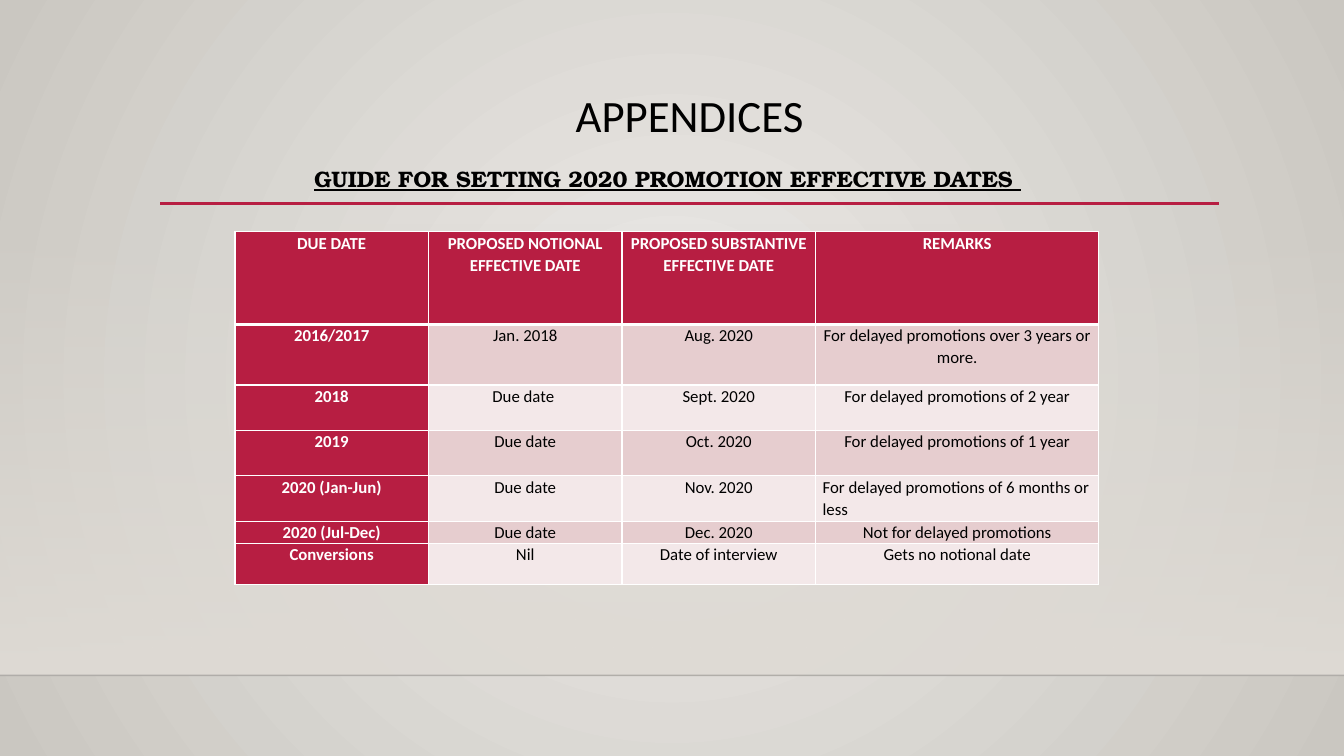
from pptx import Presentation
from pptx.dml.color import RGBColor
from pptx.enum.shapes import MSO_CONNECTOR, MSO_SHAPE
from pptx.enum.text import MSO_ANCHOR, MSO_AUTO_SIZE, PP_ALIGN
from pptx.oxml import parse_xml
from pptx.oxml.ns import nsdecls, qn
from pptx.util import Inches, Pt

LEFT, CENTER = PP_ALIGN.LEFT, PP_ALIGN.CENTER
TOP, MIDDLE = MSO_ANCHOR.TOP, MSO_ANCHOR.MIDDLE
RECTANGLE, STRAIGHT = MSO_SHAPE.RECTANGLE, MSO_CONNECTOR.STRAIGHT
SANS, SERIF = "Calibri", "TeX Gyre Bonum"
CRIMSON, WHITE, BLACK = "B71E42", "FFFFFF", "000000"
BANDS = ("E6CDCF", "F3E8E9")
WIDTH, HEIGHT = 13.33, 7.5
FLOOR_TOP = 6.7

COLUMNS = (1.92, 1.92, 1.92, 2.81)
ROWS = (0.92, 0.6, 0.45, 0.45, 0.45, 0.22, 0.41)
DATES = (
    ("DUE DATE", "PROPOSED NOTIONAL EFFECTIVE DATE",
     "PROPOSED SUBSTANTIVE EFFECTIVE DATE", "REMARKS"),
    ("2016/2017", "Jan. 2018", "Aug. 2020", "For delayed promotions over 3 years or more."),
    ("2018", "Due date ", "Sept. 2020", "For delayed promotions of 2 year"),
    ("2019", "Due date", "Oct. 2020", "For delayed promotions of 1 year"),
    ("2020 (Jan-Jun)", "Due date", "Nov. 2020", "For delayed promotions of 6 months or less"),
    ("2020 (Jul-Dec)", "Due date", "Dec. 2020", "Not for delayed promotions"),
    ("Conversions", "Nil", "Date of interview", "Gets no notional date"),
)
LEFT_ALIGNED = (4, 3)


def color(value):
    return RGBColor.from_string(value)


def write(frame, text, size=12, font=SANS, ink=BLACK, bold=False, underline=False,
          align=CENTER, spacing=1.0):
    para = frame.paragraphs[0]
    para.alignment = align
    para.line_spacing = spacing
    span = para.add_run()
    span.text = text
    span.font.name = font
    span.font.size = Pt(size)
    span.font.bold = bold
    span.font.underline = underline
    span.font.color.rgb = color(ink)


def paint_gradient(fill, element, stops, direction):
    """Give the fill its (position, colour, opacity) stops, in percent."""
    fill.gradient()
    gradient = next(element.iter(qn("a:gradFill")))
    for child in list(gradient):
        gradient.remove(child)
    marks = "".join(
        f'<a:gs pos="{place * 1000}"><a:srgbClr val="{value}">'
        f'<a:alpha val="{opacity * 1000}"/></a:srgbClr></a:gs>'
        for place, value, opacity in stops)
    gradient.append(parse_xml(f'<a:gsLst {nsdecls("a")}>{marks}</a:gsLst>'))
    gradient.append(parse_xml(direction))


def add_rule(page, left, right, top, ink, weight, opacity=100):
    rule = page.shapes.add_connector(
        STRAIGHT, Inches(left), Inches(top), Inches(right), Inches(top))
    rule.line.color.rgb = color(ink)
    rule.line.width = Pt(weight)
    rule.element.spPr.append(parse_xml(f'<a:effectLst {nsdecls("a")}/>'))
    if opacity < 100:
        shade = next(rule.element.spPr.iter(qn("a:srgbClr")))
        shade.append(parse_xml(f'<a:alpha {nsdecls("a")} val="{opacity * 1000}"/>'))


def add_backdrop(page):
    glow = (f'<a:path {nsdecls("a")} path="circle">'
            '<a:fillToRect l="50000" t="50000" r="50000" b="50000"/></a:path>')
    paint_gradient(page.background.fill, page.element,
                   ((0, "ECEAE7", 100), (100, "CAC7C1", 100)), glow)
    wall_top = 2.21
    wall = page.shapes.add_shape(RECTANGLE, 0, Inches(wall_top), Inches(WIDTH),
                                 Inches(FLOOR_TOP - wall_top))
    wall.shadow.inherit = False
    wall.line.fill.background()
    paint_gradient(wall.fill, wall.element, ((0, "DFDBD5", 0), (100, "DFDBD5", 100)),
                   f'<a:lin {nsdecls("a")} ang="5400000" scaled="0"/>')
    add_rule(page, 0, WIDTH, FLOOR_TOP, "000001", 1, opacity=20)


def place_title(page, left, top, width, height):
    title = page.shapes.title
    title.left, title.top = Inches(left), Inches(top)
    title.width, title.height = Inches(width), Inches(height)
    title.text_frame.vertical_anchor = TOP
    write(title.text_frame, "APPENDICES", size=32, spacing=0.9)
    add_rule(page, left, left + width, top + height, CRIMSON, 2.5)


def add_subtitle(page, left, top, width, height):
    box = page.shapes.add_textbox(Inches(left), Inches(top), Inches(width), Inches(height))
    frame = box.text_frame
    frame.word_wrap = False
    frame.auto_size = MSO_AUTO_SIZE.SHAPE_TO_FIT_TEXT
    frame.vertical_anchor = MIDDLE
    write(frame, "GUIDE FOR SETTING 2020 PROMOTION EFFECTIVE DATES ",
          size=16, font=SERIF, bold=True, underline=True)


def add_borders(cell_element, row):
    weights = {"L": 1, "R": 1, "T": 3 if row == 1 else 1, "B": 3 if row == 0 else 1}
    properties = cell_element.find(qn("a:tcPr"))
    for index, (side, weight) in enumerate(weights.items()):
        properties.insert(index, parse_xml(
            f'<a:ln{side} {nsdecls("a")} w="{Pt(weight)}"><a:solidFill>'
            f'<a:srgbClr val="{WHITE}"/></a:solidFill></a:ln{side}>'))


def add_dates_table(page, left, top):
    holder = page.shapes.add_table(
        len(ROWS), len(COLUMNS), Inches(left), Inches(top),
        Inches(sum(COLUMNS)), Inches(sum(ROWS)))
    table = holder.table
    table.first_col = True
    for column, width in zip(table.columns, COLUMNS):
        column.width = Inches(width)
    for row, height in zip(table.rows, ROWS):
        row.height = Inches(height)
    cell_elements = holder.element.iter(qn("a:tc"))
    for row, texts in enumerate(DATES):
        for column, text in enumerate(texts):
            heading = row == 0 or column == 0
            cell = table.cell(row, column)
            cell.margin_left = cell.margin_right = Inches(0.07)
            cell.margin_top = cell.margin_bottom = 0
            cell.fill.solid()
            cell.fill.fore_color.rgb = color(CRIMSON if heading else BANDS[(row - 1) % 2])
            write(cell.text_frame, text, ink=WHITE if heading else BLACK, bold=heading,
                  align=LEFT if (row, column) == LEFT_ALIGNED else CENTER, spacing=1.07)
            add_borders(next(cell_elements), row)


def main():
    deck = Presentation()
    deck.slide_width, deck.slide_height = Inches(WIDTH), Inches(HEIGHT)
    page = deck.slides.add_slide(deck.slide_layouts[5])
    add_backdrop(page)
    place_title(page, 1.59, 0.88, 10.5, 1.14)
    add_dates_table(page, 2.33, 2.3)
    add_subtitle(page, 2.96, 1.59, 7.32, 0.37)
    deck.save("out.pptx")


if __name__ == "__main__":
    main()
